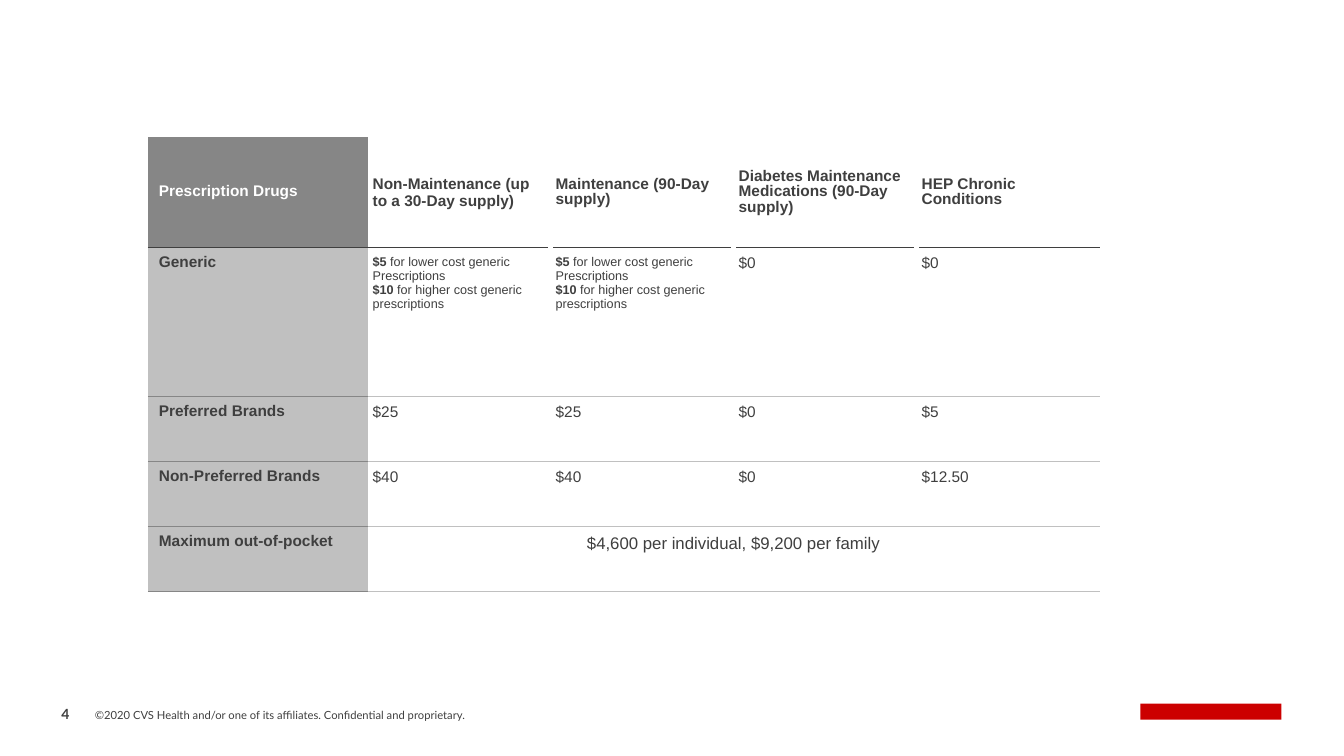
"""Builds the prescription drug cost table slide."""
from lxml import etree
from pptx import Presentation
from pptx import util as u
from pptx.dml.color import RGBColor
from pptx.enum import shapes, text
from pptx.oxml.ns import qn

WIDTH, HEIGHT = 13.33, 7.5
INK, WHITE, DARK, PALE, RED = "3F3F3F", "FFFFFF", "868686", "C0C0C0", "CC0000"
HEADERS = ["Prescription Drugs", "Non-Maintenance (up to a 30-Day supply)",
           "Maintenance (90-Day supply)",
           "Diabetes Maintenance Medications (90-Day supply)",
           "HEP Chronic Conditions"]
GENERIC = [("$5 ", True), ("for lower cost generic Prescriptions\v", False),
           ("$10 ", True), ("for higher cost generic prescriptions", False)]
COSTS = [
    ("Generic", [GENERIC, GENERIC, "$0", "$0"]),
    ("Preferred Brands", ["$25", "$25", "$0", "$5"]),
    ("Non-Preferred Brands", ["$40", "$40", "$0", "$12.50"]),
    ("Maximum out-of-pocket", ["$4,600 per individual, $9,200 per family"]),
]
COLUMNS = [2.18] + [1.815] * 4
ROWS = [1.1, 1.48] + [0.645] * 3
TABLE_AT = (0.11 * WIDTH, 0.181 * HEIGHT)
FOOTER = [
    ("©2020 CVS Health and/or one of its affiliates. Confidential and proprietary.",
     (0.94, 7.02, 8.8, 0.14), 8, False),
    ("4", (0.61, 6.96, 0.39, 0.25), 10, True),
]
LOGO_AT = (11.31, 6.98, 1.4, 0.16)


def color(code):
    """Return the colour for a hex string."""
    return RGBColor.from_string(code)


def inches(lengths):
    """Return lengths in inches as slide units."""
    return [u.Inches(length) for length in lengths]


def apply(target, formats):
    """Set each format value on the target."""
    for key, value in formats.items():
        setattr(target, key, value)


def write(paragraph, runs, size, ink=INK, font="Arial"):
    """Add (words, bold) runs to a paragraph, breaking lines at \\v."""
    for words, bold in runs:
        run = paragraph.add_run()
        run.text = words.rstrip("\v")
        apply(run.font, {"name": font, "size": u.Pt(size), "bold": bold})
        run.font.color.rgb = color(ink)
        if words.endswith("\v"):
            paragraph.add_line_break()


def edge(cell, borders):
    """Draw the four cell borders; a missing side stays empty."""
    properties = cell._tc.get_or_add_tcPr()
    for place, side in enumerate("LRTB"):
        code, points = borders.get(side, (None, 0))
        line = etree.Element(qn("a:ln" + side), w=str(u.Pt(points)))
        if code:
            fill = etree.SubElement(line, qn("a:solidFill"))
            etree.SubElement(fill, qn("a:srgbClr"), val=code)
        else:
            etree.SubElement(line, qn("a:noFill"))
        properties.insert(place, line)


def borders_of(row, column):
    """Return the borders a grid position takes."""
    rule = DARK if column == 0 else PALE
    borders = {"B": (INK if row == 0 else rule, 1)}
    if row:
        borders["T"] = (INK if row == 1 else rule, 1)
    gap = (WHITE, 1.5 if row == 0 else 4.5)
    if row < len(ROWS) - 1:
        if column > 1:
            borders["L"] = gap
        if 0 < column < len(COLUMNS) - 1:
            borders["R"] = gap
    return borders


def fill_cell(cell, row, column, content):
    """Write and format one cell."""
    label, header = column == 0, row == 0
    total = row == len(ROWS) - 1 and not label
    apply(cell, {"margin_left": u.Inches(0.11 if label else 0.05),
                 "margin_right": u.Inches(0.05),
                 "margin_top": u.Inches(0.07), "margin_bottom": u.Inches(0.07),
                 "vertical_anchor": text.MSO_ANCHOR.MIDDLE if header
                 else text.MSO_ANCHOR.TOP})
    if label:
        cell.fill.solid()
        cell.fill.fore_color.rgb = color(DARK if header else PALE)
    else:
        cell.fill.background()
    paragraph = cell.text_frame.paragraphs[0]
    if total:
        paragraph.alignment = text.PP_ALIGN.CENTER
    elif not (header and column == 1):
        paragraph.space_after = u.Pt(6)
        if label or header:
            paragraph.line_spacing = 0.9
    split = isinstance(content, list)
    runs = content if split else [(content, label or header)]
    write(paragraph, runs, 9 if split else 12 if total else 11,
          WHITE if label and header else INK)


def add_costs(slide):
    """Add the table of drug costs."""
    frame = slide.shapes.add_table(
        len(ROWS), len(COLUMNS), *inches(TABLE_AT + (sum(COLUMNS), sum(ROWS))))
    costs = frame.table
    apply(costs, {"first_row": False, "horz_banding": False})
    for column, width in zip(costs.columns, COLUMNS):
        column.width = u.Inches(width)
    for row, height in zip(costs.rows, ROWS):
        row.height = u.Inches(height)
    last = len(ROWS) - 1
    costs.cell(last, 1).merge(costs.cell(last, len(COLUMNS) - 1))
    grid = [HEADERS] + [[label] + values for label, values in COSTS]
    for row, contents in enumerate(grid):
        for column, content in enumerate(contents):
            fill_cell(costs.cell(row, column), row, column, content)
        for column in range(len(COLUMNS)):
            edge(costs.cell(row, column), borders_of(row, column))


def add_footer(slide):
    """Add the footer texts and the red mark."""
    for words, place, size, bold in FOOTER:
        frame = slide.shapes.add_textbox(*inches(place)).text_frame
        apply(frame, {"word_wrap": True, "margin_left": 0, "margin_right": 0,
                      "margin_top": 0, "margin_bottom": 0,
                      "vertical_anchor": text.MSO_ANCHOR.MIDDLE})
        write(frame.paragraphs[0], [(words, bold)], size, font="Lato")
    mark = slide.shapes.add_shape(shapes.MSO_SHAPE.RECTANGLE, *inches(LOGO_AT))
    mark.shadow.inherit = False
    mark.fill.solid()
    mark.fill.fore_color.rgb = color(RED)
    mark.line.fill.background()


def main():
    """Build and save the slide."""
    deck = Presentation()
    apply(deck, {"slide_width": u.Inches(WIDTH), "slide_height": u.Inches(HEIGHT)})
    slide = deck.slides.add_slide(deck.slide_layouts[6])
    add_footer(slide)
    add_costs(slide)
    deck.save("out.pptx")


if __name__ == "__main__":
    main()
